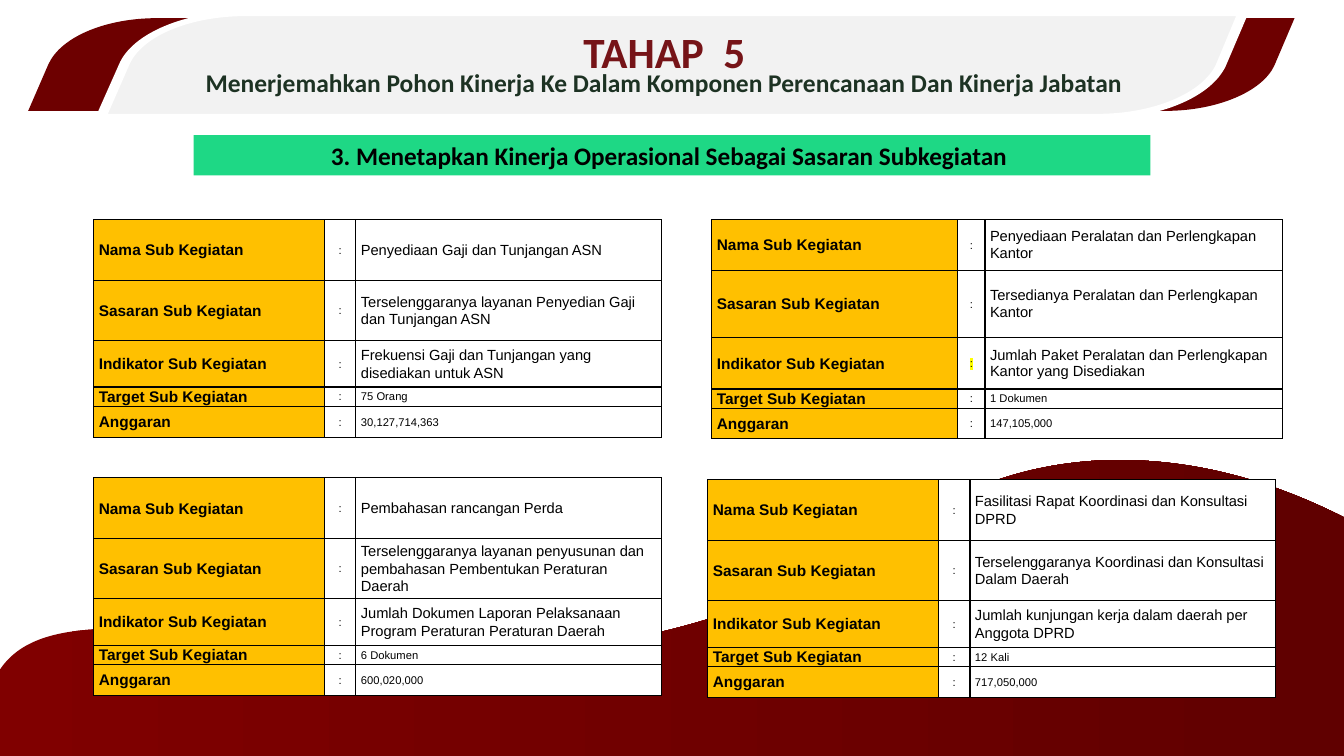
from lxml.etree import SubElement as Sub
from pptx import Presentation
from pptx.dml.color import RGBColor
from pptx.enum.shapes import MSO_SHAPE as Shape
from pptx.enum.text import MSO_ANCHOR as Anchor, MSO_AUTO_SIZE as Fit, PP_ALIGN as Align
from pptx.oxml.ns import qn
from pptx.util import Inches, Pt

LABELS = ["Nama Sub Kegiatan", "Sasaran Sub Kegiatan", "Indikator Sub Kegiatan",
          "Target Sub Kegiatan", "Anggaran"]
COLS, ROWS = [2.29, 0.31, 3.03], [0.6, 0.6, 0.46, 0.19, 0.31]

WAVE = [[(-0.05, 6.73), (0.63, 5.34, 4.52, 7.53, 8.06, 5.72),
         (8.97, 5.25, 9.61, 4.65, 10.87, 4.57), (11.94, 4.51, 12.84, 4.87, 13.44, 5.19),
         (13.44, 7.59), (-0.05, 7.59), (-0.1, 7.4, -0.13, 7.24, -0.13, 7.1),
         (-0.13, 6.93, -0.09, 6.8, -0.05, 6.73)]]
WINGS = [[(11.28, 0.92), (0, 0.92), (0.2, 0.46), (0.32, 0.19, 0.76, 0, 1.28, 0),
          (12.56, 0), (12.36, 0.47), (12.24, 0.73, 11.79, 0.92, 11.28, 0.92)]]
PLATE = [[(0.73, 0.97), (0.95, 0.46), (1.08, 0.16, 1.58, -0.05, 2.16, -0.05),
          (12.05, -0.05), (11.83, 0.46), (11.7, 0.76, 11.19, 0.97, 10.62, 0.97)]]
RIM = [[(11.98, -0.02), (11.78, 0.46), (11.65, 0.74, 11.17, 0.95, 10.61, 0.95),
        (0.79, 0.95), (1, 0.47), (1.12, 0.18, 1.6, -0.02, 2.16, -0.02)],
       [(12.11, -0.07), (2.16, -0.07), (1.56, -0.07, 1.03, 0.15, 0.9, 0.46),
        (0.66, 1), (10.62, 1), (11.22, 1, 11.74, 0.78, 11.88, 0.47)]]


def color(text):
    return RGBColor.from_string(text)


def style(para, size, tint="000000", bold=False, face="Arial", align=None, gap=None):
    para.alignment, para.line_spacing = align, gap
    font = para.font
    font.size, font.bold, font.name = Pt(size), bold, face
    font.color.rgb = color(tint)


def bend(form, loops, left, top):
    parts = [part for loop in loops for part in loop[1:]]
    for part, node in zip(parts, list(form.element.iter(qn("a:lnTo")))):
        if len(part) == 6:
            node.tag = qn("a:cubicBezTo")
            for i in (0, 2):
                x = Inches(left + part[i]) - form.left
                y = Inches(top + part[i + 1]) - form.top
                point = Sub(node, qn("a:pt"), x=str(x), y=str(y))
                node.insert(i // 2, point)


def outline(shapes, loops, left=0, top=0, fill=None):
    paths = [[(Inches(left + part[-2]), Inches(top + part[-1])) for part in loop]
             for loop in loops]
    pen = shapes.build_freeform(*paths[0][0])
    pen.add_line_segments(paths[0][1:])
    for path in paths[1:]:
        pen.move_to(*path[0])
        pen.add_line_segments(path[1:])
    form = pen.convert_to_shape()
    bend(form, loops, left, top)
    form.shadow.inherit = False
    form.line.fill.background()
    if fill:
        form.fill.solid()
        form.fill.fore_color.rgb = color(fill)
    return form


def wave(slide):
    form = outline(slide.shapes, WAVE)
    form.fill.gradient()
    form.fill.gradient_angle = 0
    for stop, tint in zip(form.fill.gradient_stops, ["800000", "600000"]):
        stop.color.rgb = color(tint)


def header(slide, left, top):
    group = slide.shapes.add_group_shape()
    for loops, tint in [(WINGS, "6D0000"), (PLATE, "F2F2F2"), (RIM, "FFFFFF")]:
        outline(group.shapes, loops, left, top, tint)
    title = slide.shapes.title
    group.element.addnext(title.element)
    title.left, title.top = Inches(left + 1.3), Inches(top - 0.03)
    title.width, title.height = Inches(10.02), Inches(1.05)
    frame = title.text_frame
    frame.auto_size, frame.word_wrap = Fit.NONE, True
    frame.vertical_anchor = Anchor.MIDDLE
    frame.margin_top = frame.margin_bottom = Inches(0.2)
    frame.text = "TAHAP  5\nMenerjemahkan Pohon Kinerja Ke Dalam Komponen Perencanaan Dan Kinerja Jabatan"
    for para, size, tint in zip(frame.paragraphs, [30.8, 18.2], ["761418", "1D3223"]):
        style(para, size, tint, True, "Calibri", Align.CENTER, 0.7)
        para.space_before = Pt(0)


def ribbon(slide, left, top, width, height):
    bar = slide.shapes.add_shape(Shape.RECTANGLE, *map(Inches, (left, top, width, height)))
    bar.shadow.inherit = False
    bar.fill.solid()
    bar.fill.fore_color.rgb = color("1ED885")
    bar.line.fill.background()
    bar.text_frame.text = "3. Menetapkan Kinerja Operasional Sebagai Sasaran Subkegiatan "
    style(bar.text_frame.paragraphs[0], 18, bold=True, face="Calibri", align=Align.CENTER)


def border(cell):
    props = cell._tc.get_or_add_tcPr()
    for side in ["lnL", "lnR", "lnT", "lnB"]:
        line = Sub(props, qn("a:" + side), w=str(Pt(1)))
        Sub(Sub(line, qn("a:solidFill")), qn("a:srgbClr"), val="000000")


def mark(run, tint):
    Sub(Sub(run.font._element, qn("a:highlight")), qn("a:srgbClr"), val=tint)


def card(slide, left, top, values, cols=COLS, rows=ROWS, back=None, gap=1.07):
    box = map(Inches, (left, top, sum(cols), sum(rows)))
    table = slide.shapes.add_table(len(rows), len(cols), *box).table
    table.first_row = table.horz_banding = False
    for col, width in zip(table.columns, cols):
        col.width = Inches(width)
    for i, (row, height) in enumerate(zip(table.rows, rows)):
        row.height = Inches(height)
        long = i < 3
        looks = [(LABELS[i], 11, True, None, 1.07, "FFC000"),
                 (":", 8, False, Align.CENTER, 1.07, back),
                 (values[i], 10.5 if long else 8, False, None, gap if long else 1.07, back)]
        for cell, (text, size, bold, align, space, fill) in zip(row.cells, looks):
            border(cell)
            if fill:
                cell.fill.solid()
                cell.fill.fore_color.rgb = color(fill)
            else:
                cell.fill.background()
            cell.margin_left = cell.margin_right = Inches(0.05)
            cell.margin_top = cell.margin_bottom = 0
            cell.vertical_anchor = Anchor.MIDDLE
            cell.text = text
            style(cell.text_frame.paragraphs[0], size, bold=bold, align=align, gap=space)
    return table


def main():
    deck = Presentation()
    deck.slide_width, deck.slide_height = Inches(13.33), Inches(7.5)
    slide = deck.slides.add_slide(deck.slide_layouts[5])
    wave(slide)
    ribbon(slide, 1.92, 1.34, 9.49, 0.4)
    card(slide, 0.93, 2.18, [
        "Penyediaan Gaji dan Tunjangan ASN",
        "Terselenggaranya layanan Penyedian Gaji dan Tunjangan ASN",
        "Frekuensi Gaji dan Tunjangan yang disediakan untuk ASN",
        "75 Orang", "30,127,714,363"])
    tools = card(slide, 7.06, 2.18, [
        "Penyediaan Peralatan dan Perlengkapan Kantor",
        "Tersedianya Peralatan dan Perlengkapan Kantor",
        "Jumlah Paket Peralatan dan Perlengkapan Kantor yang Disediakan",
        "1 Dokumen", "147,105,000"],
        [2.44, 0.27, 2.95], [0.5, 0.67, 0.51, 0.19, 0.3], gap=1.0)
    mark(tools.cell(2, 1).text_frame.paragraphs[0].runs[0], "FFFF00")
    card(slide, 0.93, 4.74, [
        "Pembahasan rancangan Perda",
        "Terselenggaranya layanan penyusunan dan pembahasan Pembentukan Peraturan Daerah",
        "Jumlah Dokumen Laporan Pelaksanaan Program Peraturan Peraturan Daerah",
        "6 Dokumen", "600,020,000"], back="FFFFFF")
    header(slide, 0.28, 0.18)
    card(slide, 7.02, 4.76, [
        "Fasilitasi Rapat Koordinasi dan Konsultasi DPRD",
        "Terselenggaranya Koordinasi dan Konsultasi Dalam Daerah",
        "Jumlah kunjungan kerja dalam daerah per Anggota DPRD",
        "12 Kali", "717,050,000"], back="FFFFFF")
    deck.save("out.pptx")


if __name__ == "__main__":
    main()
